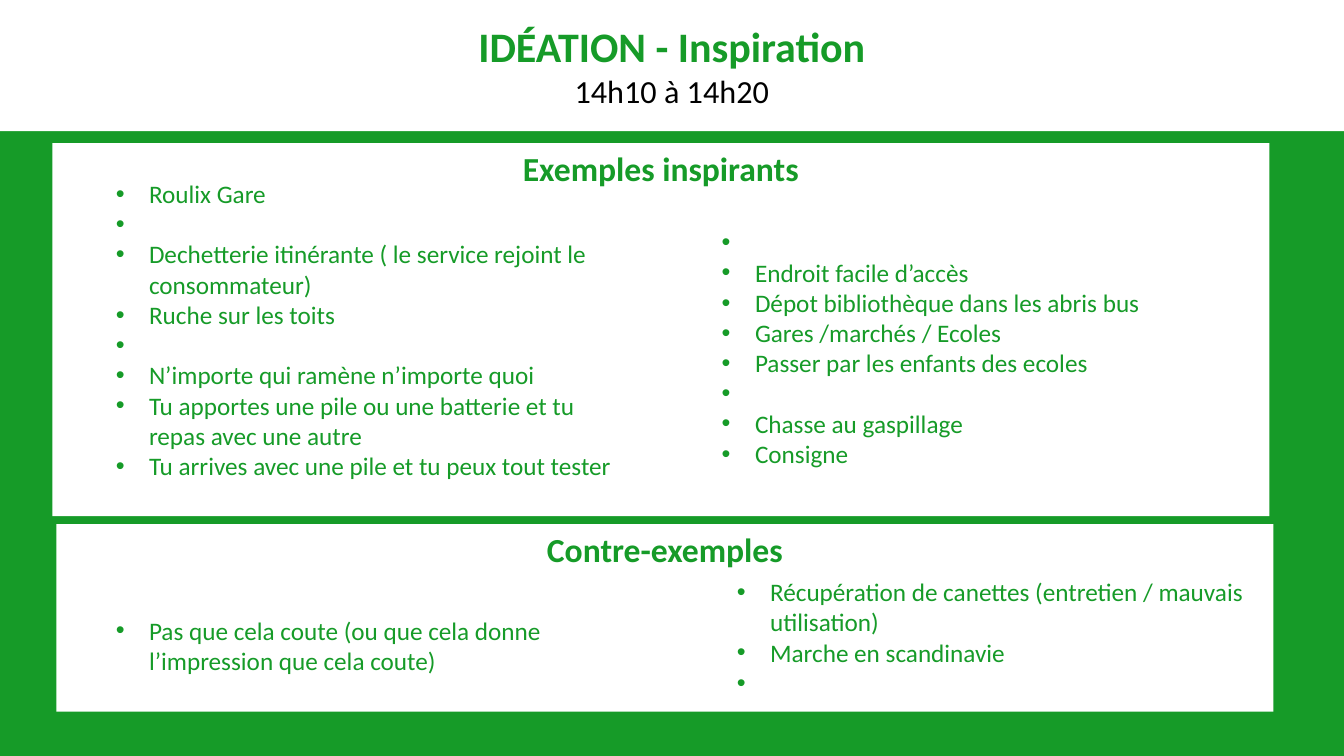
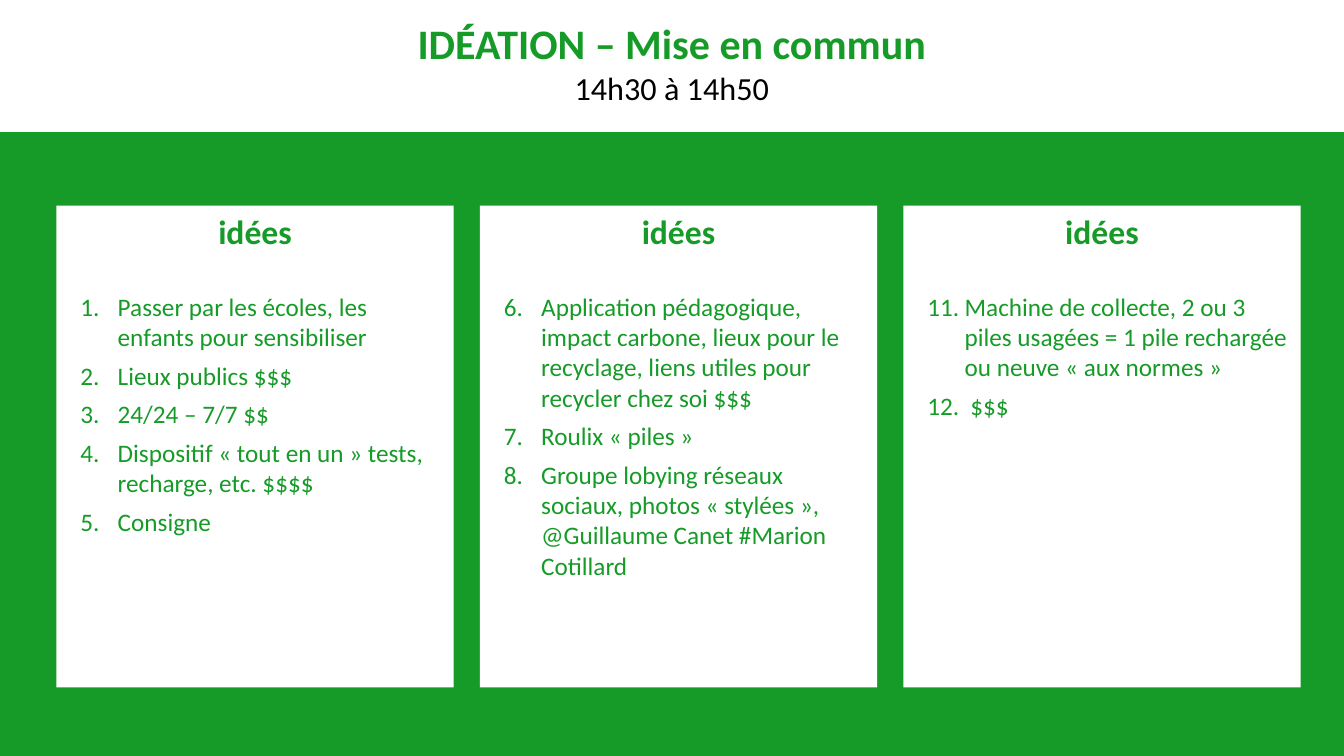
from dataclasses import dataclass

from lxml.etree import SubElement
from pptx import Presentation
from pptx.dml.color import RGBColor as RGB
from pptx.enum.shapes import MSO_SHAPE as SHAPE
from pptx.enum.text import MSO_ANCHOR as ANCHOR, PP_ALIGN as ALIGN
from pptx.oxml.ns import qn
from pptx.util import Inches, Pt


@dataclass(frozen=True)
class Theme:
    green: RGB = RGB(0x16, 0x9B, 0x28)
    white: RGB = RGB(0xFF, 0xFF, 0xFF)
    black: RGB = RGB(0, 0, 0)
    font: str = "Calibri"
    title: int = 30
    time: int = 23
    heading: int = 24
    body: int = 18


class Deck:
    """Holds the theme and the current slide and draws each kind of element."""

    def __init__(self, theme):
        self.t = theme
        self.prs = Presentation()
        self.prs.slide_width = Inches(13.33)
        self.prs.slide_height = Inches(7.5)
        self.s = None

    def slide(self):
        self.s = self.prs.slides.add_slide(self.prs.slide_layouts[6])
        fill = self.s.background.fill
        fill.solid()
        fill.fore_color.rgb = self.t.green

    def run(self, p, text, size, color, bold=False):
        r = p.add_run()
        r.text = text
        r.font.name = self.t.font
        r.font.size = Pt(size)
        r.font.bold = bold
        r.font.color.rgb = color

    def box(self, x, y, w, h, anchor=ANCHOR.TOP):
        sp = self.s.shapes.add_shape(
            SHAPE.RECTANGLE, Inches(x), Inches(y), Inches(w), Inches(h))
        sp.shadow.inherit = False
        sp.fill.solid()
        sp.fill.fore_color.rgb = self.t.white
        sp.line.fill.background()
        tf = sp.text_frame
        tf.word_wrap = True
        tf.vertical_anchor = anchor
        tf.paragraphs[0].alignment = ALIGN.CENTER
        return tf

    def header(self, title, time, y=0, bottom=0.05):
        tf = self.box(0, y, 13.33, 1.31, ANCHOR.MIDDLE)
        tf.margin_bottom = Inches(bottom)
        self.run(tf.paragraphs[0], title, self.t.title, self.t.green, True)
        p = tf.add_paragraph()
        p.alignment = ALIGN.CENTER
        self.run(p, time, self.t.time, self.t.black)

    def panel(self, heading, x, y, w, h):
        tf = self.box(x, y, w, h)
        self.run(tf.paragraphs[0], heading, self.t.heading, self.t.green, True)

    def items(self, texts, x, y, w, h, start=None):
        tf = self.s.shapes.add_textbox(
            Inches(x), Inches(y), Inches(w), Inches(h)).text_frame
        tf.word_wrap = True
        for i, text in enumerate(texts):
            p = tf.add_paragraph() if i else tf.paragraphs[0]
            if start and i:
                p.space_before = Pt(6)
            self.run(p, text, self.t.body, self.t.green)
            self.marker(p, start)

    def marker(self, p, start):
        left, hang = (0.51, 0.37) if start else (0.45, 0.33)
        pPr = p._p.get_or_add_pPr()
        pPr.set("marL", str(Inches(left)))
        pPr.set("indent", str(-Inches(hang)))
        color = SubElement(pPr, qn("a:buClr"))
        SubElement(color, qn("a:srgbClr"), val=str(self.t.green))
        if start:
            SubElement(pPr, qn("a:buFont"), typeface=self.t.font)
            SubElement(pPr, qn("a:buAutoNum"),
                       type="arabicPeriod", startAt=str(start))
        else:
            SubElement(pPr, qn("a:buFont"), typeface="Arial")
            SubElement(pPr, qn("a:buChar"), char="•")


def inspiration(deck):
    deck.slide()
    deck.header("IDÉATION - Inspiration", "14h10 à 14h20", y=-0.01)
    deck.panel("Exemples inspirants", 0.52, 1.42, 12.07, 3.7)
    deck.panel("Contre-exemples", 0.56, 5.2, 12.07, 1.86)
    w = 5.36
    deck.items([
        "Roulix Gare",
        " ",
        "Dechetterie itinérante ( le service rejoint le consommateur)",
        "Ruche sur les toits",
        " ",
        "N’importe qui ramène n’importe quoi",
        "Tu apportes une pile ou une batterie et tu repas avec une autre",
        "Tu arrives avec une pile et tu peux tout tester",
    ], 0.93, 1.72, w, 2.53)
    deck.items([
        " ",
        "Endroit facile d’accès",
        "Dépot bibliothèque dans les abris bus",
        "Gares /marchés / Ecoles",
        "Passer par les enfants des ecoles",
        " ",
        "Chasse au gaspillage",
        "Consigne",
    ], 6.94, 2.2, w, 2.53)
    deck.items([
        "Pas que cela coute (ou que cela donne l’impression que cela coute)",
    ], 0.93, 6.05, w, 1.09)
    deck.items([
        "Récupération de canettes (entretien / mauvais utilisation)",
        "Marche en scandinavie",
        " ",
    ], 7.09, 5.67, w, 1.09)


def mise_en_commun(deck):
    deck.slide()
    deck.header("IDÉATION – Mise en commun", "14h30 à 14h50", bottom=0.13)
    columns = [
        (1, ["Passer par les écoles, les enfants pour sensibiliser",
             "Lieux publics $$$",
             "24/24 – 7/7 $$",
             "Dispositif « tout en un » tests, recharge, etc. $$$$",
             "Consigne"]),
        (6, ["Application pédagogique, impact carbone, lieux pour le "
             "recyclage, liens utiles pour recycler chez soi $$$",
             "Roulix « piles »",
             "Groupe lobying réseaux sociaux, photos « stylées », "
             "@Guillaume Canet #Marion Cotillard"]),
        (11, ["Machine de collecte, 2 ou 3 piles usagées = 1 pile rechargée "
              "ou neuve « aux normes »",
              " $$$"]),
    ]
    w, pitch = 3.94, 4.2
    for i, (start, ideas) in enumerate(columns):
        x = 0.56 + i * pitch
        deck.panel("idées", x, 2.04, w, 4.78)
        deck.items(ideas, x, 2.84, w, 3.99, start)


def main():
    deck = Deck(Theme())
    inspiration(deck)
    mise_en_commun(deck)
    deck.prs.save("out.pptx")


if __name__ == "__main__":
    main()
